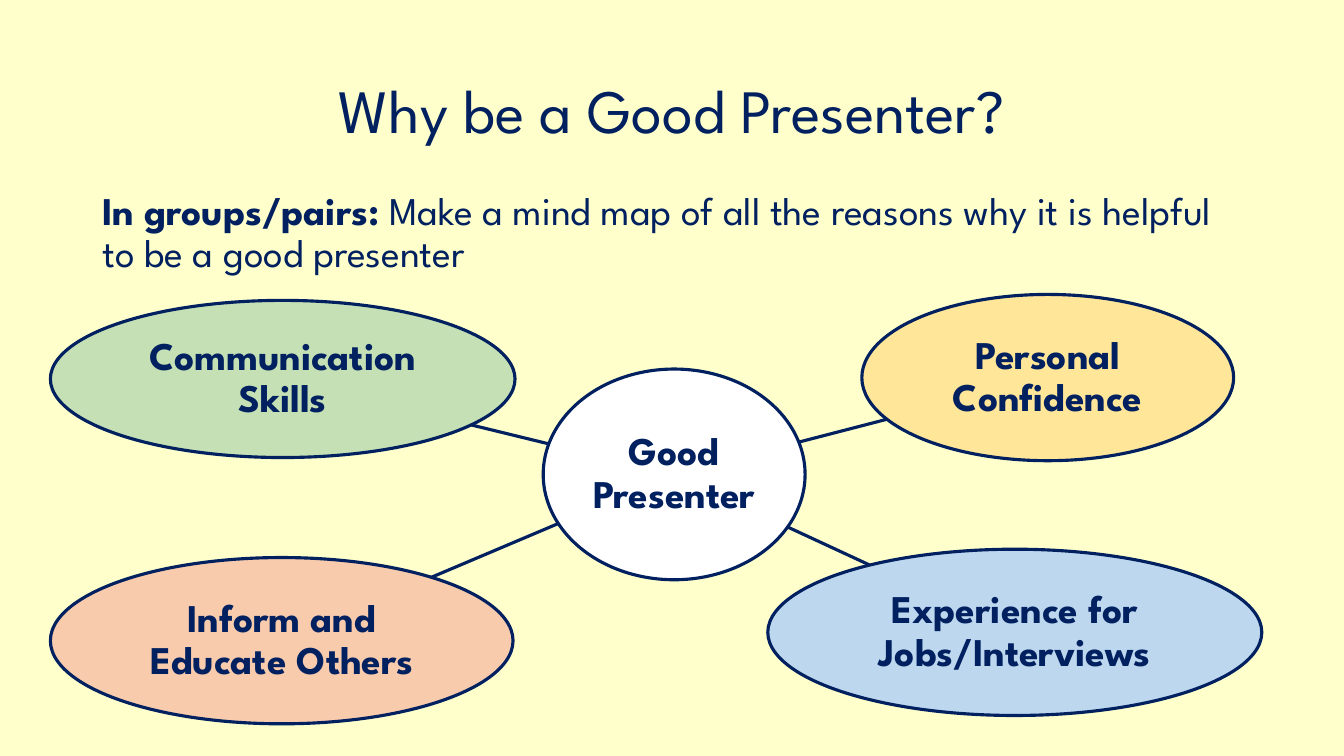
from math import hypot

from lxml import etree
from pptx import Presentation
from pptx.dml.color import RGBColor
from pptx.enum.shapes import MSO_CONNECTOR, MSO_SHAPE
from pptx.enum.text import MSO_ANCHOR, MSO_AUTO_SIZE, PP_ALIGN
from pptx.oxml.ns import qn
from pptx.util import Cm, Pt

OVAL = MSO_SHAPE.OVAL
STRAIGHT = MSO_CONNECTOR.STRAIGHT
MIDDLE = MSO_ANCHOR.MIDDLE
TOP = MSO_ANCHOR.TOP
NO_AUTOFIT = MSO_AUTO_SIZE.NONE
CENTER = PP_ALIGN.CENTER
LEFT = PP_ALIGN.LEFT

CREAM = RGBColor(0xFF, 0xFF, 0xCC)
NAVY = RGBColor(0x00, 0x20, 0x60)
WHITE = RGBColor(0xFF, 0xFF, 0xFF)
GREEN = RGBColor(0xC5, 0xE0, 0xB4)
YELLOW = RGBColor(0xFF, 0xE6, 0x99)
BLUE = RGBColor(0xBD, 0xD7, 0xEE)
ORANGE = RGBColor(0xF8, 0xCB, 0xAD)

FONT = "League Spartan"
LINE_WIDTH = Pt(2.25)
HUB = ("Good Presenter", WHITE, (13.69, 9.3, 6.6, 5.31))
REASONS = [
    ("Personal Confidence", YELLOW, (21.72, 7.42, 9.37, 4.19)),
    ("Experience for Jobs/Interviews", BLUE, (19.35, 13.84, 12.45, 4.19)),
    ("Inform and Educate Others", ORANGE, (1.27, 14.05, 11.66, 4.19)),
    ("Communication Skills", GREEN, (1.27, 7.57, 11.71, 3.96)),
]


def lengths(box):
    """Turn a box in centimetres into slide lengths."""
    return [Cm(value) for value in box]


def format_paragraph(paragraph, size, alignment, bold=None):
    """Apply the shared typeface, colour and line spacing."""
    paragraph.alignment = alignment
    paragraph.line_spacing = 0.9
    paragraph.font.name = FONT
    paragraph.font.size = Pt(size)
    paragraph.font.color.rgb = NAVY
    paragraph.font.bold = bold


def prepare_frame(frame, anchor):
    """Wrap the text at a fixed size and anchor it."""
    frame.word_wrap = True
    frame.auto_size = NO_AUTOFIT
    frame.vertical_anchor = anchor


def place_title(slide, text, box):
    """Move and format the title placeholder."""
    title = slide.shapes.title
    title.left, title.top, title.width, title.height = lengths(box)
    prepare_frame(title.text_frame, MIDDLE)
    title.text_frame.text = text
    format_paragraph(title.text_frame.paragraphs[0], 44, CENTER)


def add_task(slide, label, text, box):
    """Add the instruction with its bold label."""
    frame = slide.shapes.add_textbox(*lengths(box)).text_frame
    prepare_frame(frame, TOP)
    paragraph = frame.paragraphs[0]
    format_paragraph(paragraph, 28, LEFT)
    paragraph.space_before = Pt(10)
    for words, bold in ((label, True), (text, False)):
        run = paragraph.add_run()
        run.text = words
        run.font.bold = bold


def add_bubble(slide, text, fill, box):
    """Add an outlined ellipse holding bold centred text."""
    bubble = slide.shapes.add_shape(OVAL, *lengths(box))
    bubble.shadow.inherit = False
    bubble.fill.solid()
    bubble.fill.fore_color.rgb = fill
    bubble.line.color.rgb = NAVY
    bubble.line.width = LINE_WIDTH
    frame = bubble.text_frame
    prepare_frame(frame, MIDDLE)
    frame.margin_left = frame.margin_right = Cm(0.05)
    frame.margin_top = frame.margin_bottom = Cm(0.05)
    frame.text = text
    format_paragraph(frame.paragraphs[0], 28, CENTER, True)


def middle(box):
    """Return the centre of a box."""
    left, top, width, height = box
    return left + width / 2, top + height / 2


def edge_point(box, target):
    """Return where the ray from an ellipse's centre to a target leaves it."""
    x, y = middle(box)
    dx, dy = target[0] - x, target[1] - y
    scale = 1 / hypot(2 * dx / box[2], 2 * dy / box[3])
    return x + dx * scale, y + dy * scale


def add_link(slide, hub_box, reason_box):
    """Join the rims of two ellipses along the line between their centres."""
    start = edge_point(hub_box, middle(reason_box))
    end = edge_point(reason_box, middle(hub_box))
    link = slide.shapes.add_connector(STRAIGHT, *lengths(start + end))
    link.line.color.rgb = NAVY
    link.line.width = LINE_WIDTH
    etree.SubElement(link._element.spPr, qn("a:effectLst"))


def add_mind_map(slide, hub, reasons):
    """Add the hub and its linked reasons."""
    add_bubble(slide, *hub)
    for text, fill, box in reasons:
        add_link(slide, hub[2], box)
        add_bubble(slide, text, fill, box)


def main():
    """Build and save the slide."""
    presentation = Presentation()
    presentation.slide_width = Cm(33.87)
    presentation.slide_height = Cm(19.05)
    slide = presentation.slides.add_slide(presentation.slide_layouts[5])
    slide.background.fill.solid()
    slide.background.fill.fore_color.rgb = CREAM
    place_title(slide, "Why be a Good Presenter?", (2.33, 1.02, 29.21, 3.68))
    add_task(
        slide,
        "In groups/pairs: ",
        "Make a mind map of all the reasons why it is helpful to be a good presenter",
        (2.33, 4.7, 29.21, 2.5),
    )
    add_mind_map(slide, HUB, REASONS)
    presentation.save("out.pptx")


if __name__ == "__main__":
    main()
